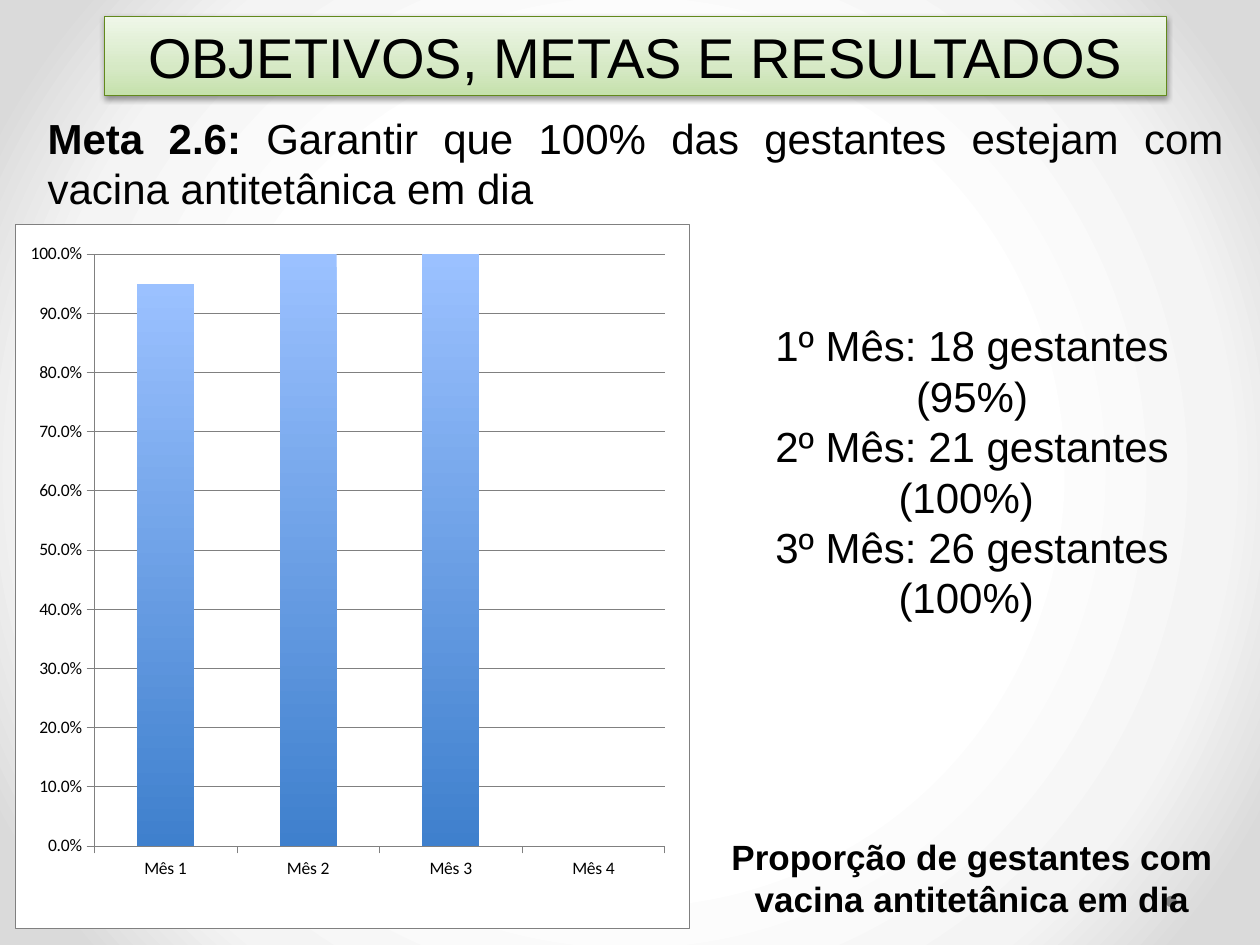
from pptx import Presentation
from pptx.chart.data import CategoryChartData
from pptx.dml.color import RGBColor
from pptx.enum.chart import XL_CHART_TYPE, XL_TICK_MARK
from pptx.enum.shapes import MSO_SHAPE
from pptx.enum.text import MSO_ANCHOR, PP_ALIGN
from pptx.oxml import parse_xml
from pptx.oxml.ns import nsdecls, qn
from pptx.util import Inches, Pt

C = {"black": "000000", "white": "FFFFFF", "gray": "808080", "border": "62891C",
     "green1": "C5E1AB", "green2": "D6E9C5", "green3": "EFF7E9",
     "blue1": "9BC1FF", "blue2": "3F80CD", "edge1": "F4F4F4", "edge2": "DADADA"}
RGB = {name: RGBColor.from_string(value) for name, value in C.items()}
DOWN, UP = '<a:lin ang="5400000" scaled="0"/>', '<a:lin ang="16200000" scaled="0"/>'
RADIAL = '<a:path path="circle"><a:fillToRect l="50000" t="50000" r="50000" b="50000"/></a:path>'

prs = Presentation()
prs.slide_width, prs.slide_height = Inches(10), Inches(7.5)
s = prs.slides.add_slide(prs.slide_layouts[6])


def pct(x, y, w, h):
    W, H = prs.slide_width, prs.slide_height
    return int(x * W / 100), int(y * H / 100), int(w * W / 100), int(h * H / 100)


def gradient(fill, element, stops, direction):
    fill.solid()
    fill.fore_color.rgb = RGB["white"]
    old = element.find(".//" + qn("a:solidFill"))
    gs = "".join(f'<a:gs pos="{pos * 1000}"><a:srgbClr val="{C[name]}"/></a:gs>' for pos, name in stops)
    new = parse_xml(f'<a:gradFill {nsdecls("a")} rotWithShape="1"><a:gsLst>{gs}</a:gsLst>{direction}</a:gradFill>')
    old.getparent().replace(old, new)


gradient(s.background.fill, s._element, [(50, "white"), (76, "edge1"), (92, "edge2")], RADIAL)

dot = s.shapes.add_shape(MSO_SHAPE.OVAL, *pct(92.5, 94.8, 0.9, 1.2))
dot.shadow.inherit = False
dot.fill.solid()
dot.fill.fore_color.rgb = RGB["gray"]
dot.line.fill.background()

title = s.shapes.add_shape(MSO_SHAPE.RECTANGLE, *pct(8.3, 1.73, 84.3, 8.4))
gradient(title.fill, title._element, [(0, "green1"), (35, "green2"), (100, "green3")], UP)
title.line.color.rgb = RGB["border"]
title.line.width = Pt(0.75)
title._element.spPr.append(parse_xml(
    f'<a:effectLst {nsdecls("a")}><a:outerShdw blurRad="39370" dist="20320" dir="5400000" rotWithShape="0">'
    f'<a:srgbClr val="{C["black"]}"><a:alpha val="38000"/></a:srgbClr></a:outerShdw></a:effectLst>'))

goal, caption, results = [s.shapes.add_textbox(*pct(*area)) for area in (
    (2.8, 11.2, 95.3, 12), (56.3, 87.73, 41.7, 10.27), (56.3, 33.2, 41.7, 33.6))]

texts = [
    (title, 32, PP_ALIGN.CENTER, [[("OBJETIVOS, METAS E RESULTADOS", False)]]),
    (goal, 24, PP_ALIGN.JUSTIFY, [[("Meta 2.6: ", True),
        ("Garantir que 100% das gestantes estejam com vacina antitetânica em dia", False)]]),
    (caption, 20, PP_ALIGN.CENTER, [[("Proporção de gestantes com vacina antitetânica em dia", True)]]),
    (results, 24, PP_ALIGN.CENTER, [[("1º Mês: 18 gestantes (95%)", False)],
        [("2º Mês: 21 gestantes (100%) ", False)], [("3º Mês: 26 gestantes (100%) ", False)]]),
]
for sp, size, align, paragraphs in texts:
    tf = sp.text_frame
    tf.word_wrap = True
    tf.vertical_anchor = MSO_ANCHOR.MIDDLE if sp is title else MSO_ANCHOR.TOP
    for i, runs in enumerate(paragraphs):
        p = tf.add_paragraph() if i else tf.paragraphs[0]
        p.alignment = align
        for text, bold in runs:
            r = p.add_run()
            r.text = text
            r.font.name, r.font.size, r.font.bold = "Arial", Pt(size), bold
            r.font.color.rgb = RGB["black"]

data = CategoryChartData(number_format="0.0%")
data.categories = ["Mês 1", "Mês 2", "Mês 3", "Mês 4"]
data.add_series("Series 1", [0.95, 1, 1, 0])
chart = s.shapes.add_chart(XL_CHART_TYPE.COLUMN_CLUSTERED, *pct(1.2, 23.73, 53.5, 74.53), data).chart
chart.has_legend = chart.has_title = False
chart.font.name, chart.font.size = "Calibri", Pt(10)
chart.font.color.rgb = RGB["black"]

plot = chart.plots[0]
plot.gap_width, plot.vary_by_categories = 150, False
bars = plot.series[0]
gradient(bars.format.fill, bars._element, [(0, "blue1"), (100, "blue2")], DOWN)

val = chart.value_axis
val.minimum_scale, val.maximum_scale, val.major_unit = 0, 1, 0.1
val.has_major_gridlines = True
val.tick_labels.number_format = "0.0%"
val.tick_labels.number_format_is_linked = False
for axis in (val, chart.category_axis):
    axis.major_tick_mark = XL_TICK_MARK.OUTSIDE
for line in (val.format.line, chart.category_axis.format.line, val.major_gridlines.format.line):
    line.color.rgb = RGB["gray"]
    line.width = Pt(0.25)

space = chart._chartSpace
area = space.find(".//" + qn("c:plotArea"))
for old in area.findall(qn("c:layout")):
    area.remove(old)
frame = "".join(f'<c:{k} val="{v}"/>' for k, v in (
    ("layoutTarget", "inner"), ("xMode", "edge"), ("yMode", "edge"),
    ("x", 0.117), ("y", 0.042), ("w", 0.847), ("h", 0.841)))
area.insert(0, parse_xml(f'<c:layout {nsdecls("c")}><c:manualLayout>{frame}</c:manualLayout></c:layout>'))
white = f'<a:solidFill><a:srgbClr val="{C["white"]}"/></a:solidFill>'
area.append(parse_xml(f'<c:spPr {nsdecls("c", "a")}>{white}</c:spPr>'))
space.find(qn("c:txPr")).addprevious(parse_xml(
    f'<c:spPr {nsdecls("c", "a")}>{white}<a:ln w="3175"><a:solidFill>'
    f'<a:srgbClr val="{C["gray"]}"/></a:solidFill></a:ln></c:spPr>'))

prs.save("out.pptx")
